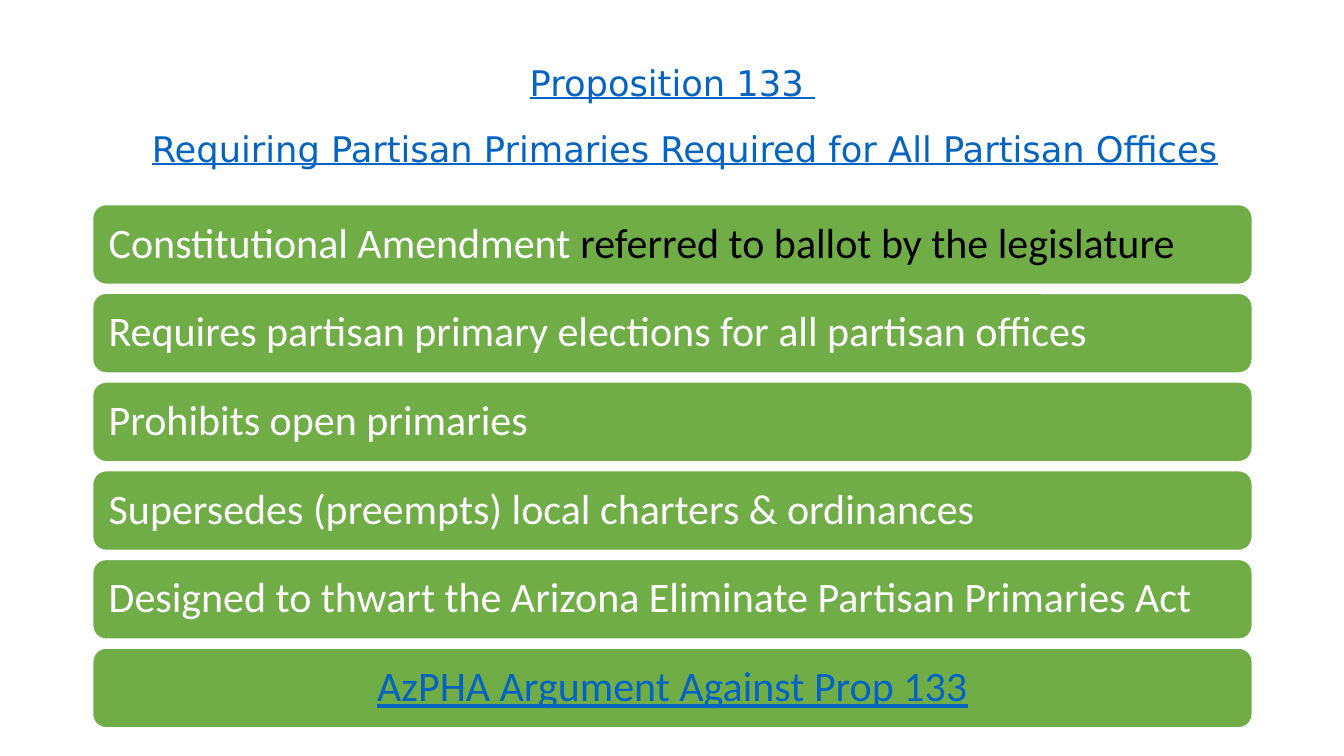
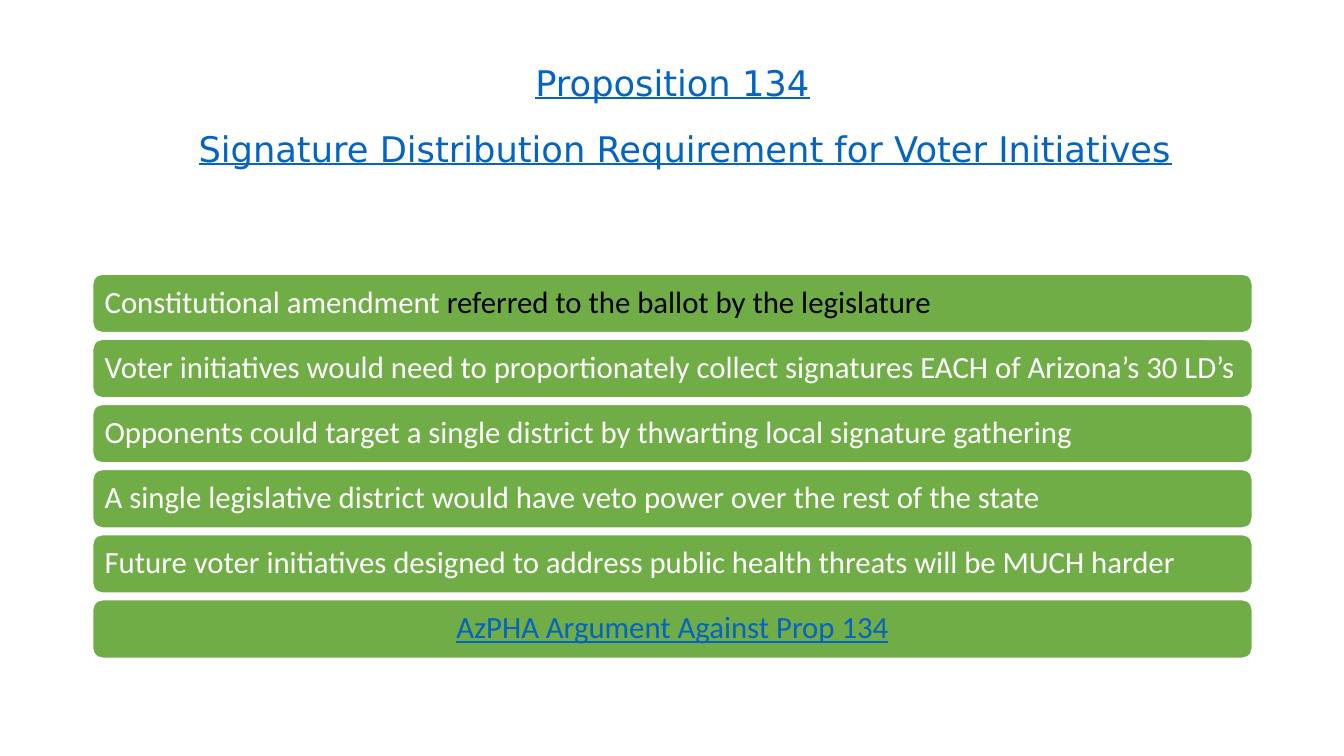
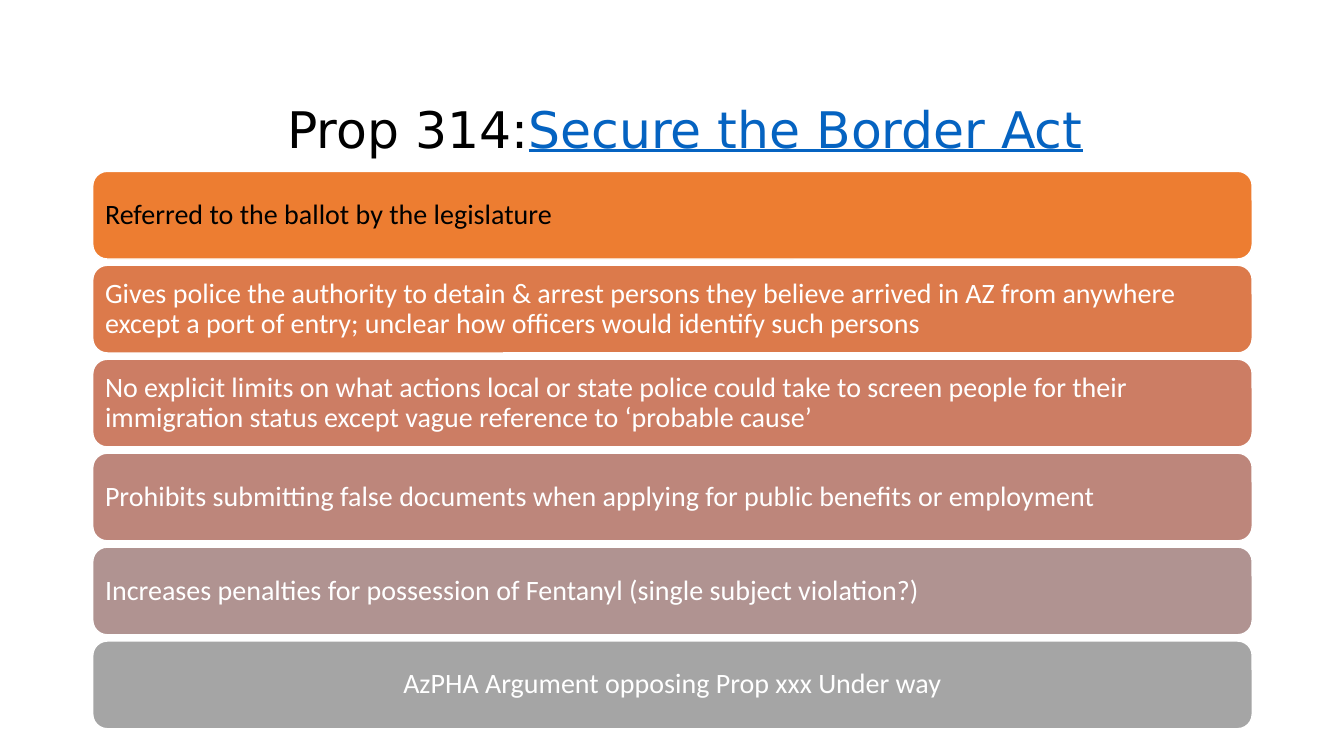
from dataclasses import dataclass

from pptx import Presentation
from pptx import util as u
from pptx.dml.color import RGBColor
from pptx.enum import shapes, text


@dataclass(frozen=True)
class Theme:
    white: str = "FFFFFF"
    black: str = "000000"
    link: str = "0563C1"
    green: str = "70AD47"
    orange_to_grey: tuple = ("ED7D31", "DC7A4B", "CC7D64", "BD867B", "B09391", "A5A5A5")
    title_font: str = "DejaVu Sans"
    body_font: str = "Calibri"
    proposition_size: float = 25.2
    act_size: float = 36


THEME = Theme()
LEFT, WIDTH = u.Inches(0.92), u.Inches(11.5)
TITLE_TOP, TITLE_HEIGHT = u.Inches(0.61), u.Inches(1.24)
TITLE_MARGIN = u.Inches(0.25)

# Each text is a list of (words, colour); link-coloured words are underlined.
SLIDES = [
    {
        "title": [("Proposition 133 \vRequiring Partisan Primaries Required "
                   "for All Partisan Offices", THEME.link)],
        "title_size": THEME.proposition_size, "title_spacing": 1.55,
        "title_indent": -TITLE_MARGIN, "title_bottom": 0.17,
        "first_top": 2.03, "last_top": 6.43, "height": 0.79,
        "inset": 0.12, "size": 30, "fills": [THEME.green] * 6,
        "bars": [
            [("Constitutional Amendment ", THEME.white),
             ("referred to ballot by the legislature", THEME.black)],
            [("Requires partisan primary elections for all partisan offices", THEME.white)],
            [("Prohibits open primaries", THEME.white)],
            [("Supersedes (preempts) local charters & ordinances", THEME.white)],
            [("Designed to thwart the Arizona Eliminate Partisan Primaries Act", THEME.white)],
            [("AzPHA Argument Against Prop 133", THEME.link)],
        ],
    },
    {
        "title": [("Proposition 134\vSignature Distribution Requirement "
                   "for Voter Initiatives", THEME.link)],
        "title_size": THEME.proposition_size, "title_spacing": 1.55,
        "title_indent": -TITLE_MARGIN, "title_bottom": 0.17,
        "first_top": 2.72, "last_top": 5.95, "height": 0.58,
        "inset": 0.09, "size": 22, "fills": [THEME.green] * 6,
        "bars": [
            [("Constitutional amendment ", THEME.white),
             ("referred to the ballot by the legislature", THEME.black)],
            [("Voter initiatives would need to proportionately collect signatures "
              "EACH of Arizona’s 30 LD’s", THEME.white)],
            [("Opponents could target a single district by thwarting local "
              "signature gathering", THEME.white)],
            [("A single legislative district would have veto power over the rest "
              "of the state", THEME.white)],
            [("Future voter initiatives designed to address public health threats "
              "will be MUCH harder", THEME.white)],
            [("AzPHA Argument Against Prop 134", THEME.link)],
        ],
    },
    {
        "title": [("Prop 314:", THEME.black), ("Secure the Border Act", THEME.link)],
        "title_size": THEME.act_size, "title_spacing": 0.9,
        "title_indent": 0, "title_bottom": 0.27,
        "first_top": 1.7, "last_top": 6.36, "height": 0.87,
        "inset": 0.08, "size": 20, "fills": THEME.orange_to_grey,
        "bars": [
            [("Referred to the ballot by the legislature", THEME.black)],
            [("Gives police the authority to detain & arrest persons they believe "
              "arrived in AZ from anywhere except a port of entry; unclear how "
              "officers would identify such persons", THEME.white)],
            [("No explicit limits on what actions local or state police could take "
              "to screen people for their immigration status except vague reference "
              "to ‘probable cause’", THEME.white)],
            [("Prohibits submitting false documents when applying for public "
              "benefits or employment", THEME.white)],
            [("Increases penalties for possession of Fentanyl (single subject "
              "violation?)", THEME.white)],
            [("AzPHA Argument opposing Prop xxx Under way", THEME.white)],
        ],
    },
]


def set_attributes(target, values):
    for name, value in values.items():
        setattr(target, name, value)


def write_paragraph(frame, parts, font_name, size, frame_format, paragraph_format):
    """Fill the frame's first paragraph with coloured parts."""
    set_attributes(frame, {"word_wrap": True, "auto_size": text.MSO_AUTO_SIZE.NONE,
                           **frame_format})
    paragraph = frame.paragraphs[0]
    set_attributes(paragraph, paragraph_format)
    for words, colour in parts:
        for index, line in enumerate(words.split("\v")):
            if index:
                paragraph.add_line_break()
            run = paragraph.add_run()
            run.text = line
            set_attributes(run.font, {"name": font_name, "size": u.Pt(size),
                                      "bold": False, "underline": colour == THEME.link})
            run.font.color.rgb = RGBColor.from_string(colour)


presentation = Presentation()
set_attributes(presentation, {"slide_width": u.Inches(13.33), "slide_height": u.Inches(7.5)})
title_only = presentation.slide_layouts.get_by_name("Title Only")

for content in SLIDES:
    slide = presentation.slides.add_slide(title_only)
    title = slide.shapes.title
    set_attributes(title, {"left": LEFT, "top": TITLE_TOP,
                           "width": WIDTH, "height": TITLE_HEIGHT})
    write_paragraph(
        title.text_frame, content["title"], THEME.title_font, content["title_size"],
        {"vertical_anchor": text.MSO_ANCHOR.BOTTOM,
         "margin_bottom": u.Inches(content["title_bottom"])},
        {"alignment": text.PP_ALIGN.CENTER, "line_spacing": content["title_spacing"]})
    properties = title.text_frame.paragraphs[0]._p.get_or_add_pPr()
    properties.set("marL", str(TITLE_MARGIN))
    properties.set("indent", str(content["title_indent"]))

    last = len(content["bars"]) - 1
    pitch = (content["last_top"] - content["first_top"]) / last
    inset = u.Inches(content["inset"])
    for index, (parts, fill) in enumerate(zip(content["bars"], content["fills"])):
        bar = slide.shapes.add_shape(
            shapes.MSO_SHAPE.ROUNDED_RECTANGLE, LEFT,
            u.Inches(content["first_top"] + index * pitch), WIDTH,
            u.Inches(content["height"]))
        bar.shadow.inherit = False
        bar.fill.solid()
        bar.fill.fore_color.rgb = RGBColor.from_string(fill)
        bar.line.color.rgb = RGBColor.from_string(THEME.white)
        bar.line.width = u.Pt(1)
        alignment = text.PP_ALIGN.CENTER if index == last else text.PP_ALIGN.LEFT
        write_paragraph(
            bar.text_frame, parts, THEME.body_font, content["size"],
            {"vertical_anchor": text.MSO_ANCHOR.MIDDLE,
             "margin_left": inset, "margin_right": inset,
             "margin_top": inset, "margin_bottom": inset},
            {"alignment": alignment, "line_spacing": 0.9})

presentation.save("out.pptx")
